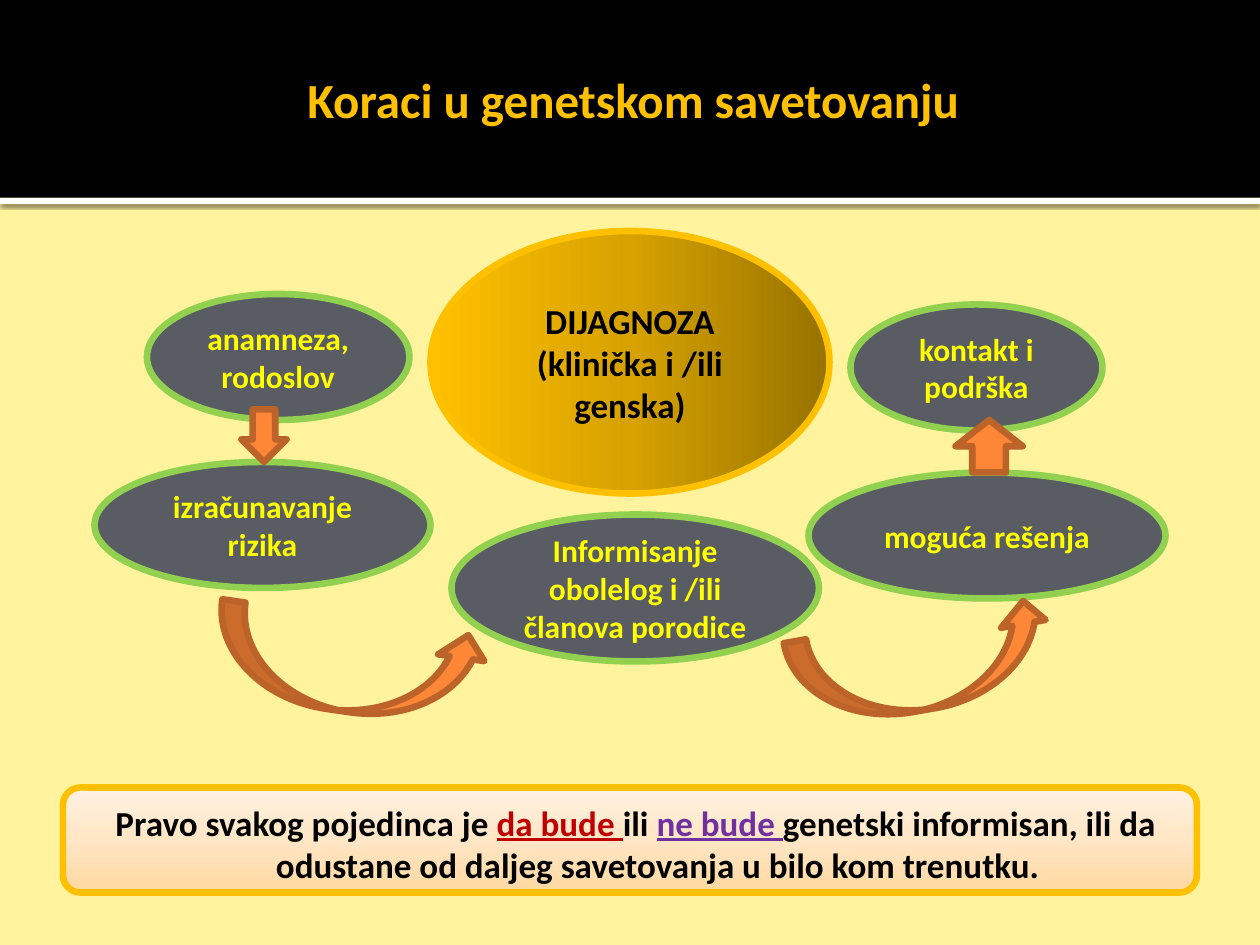
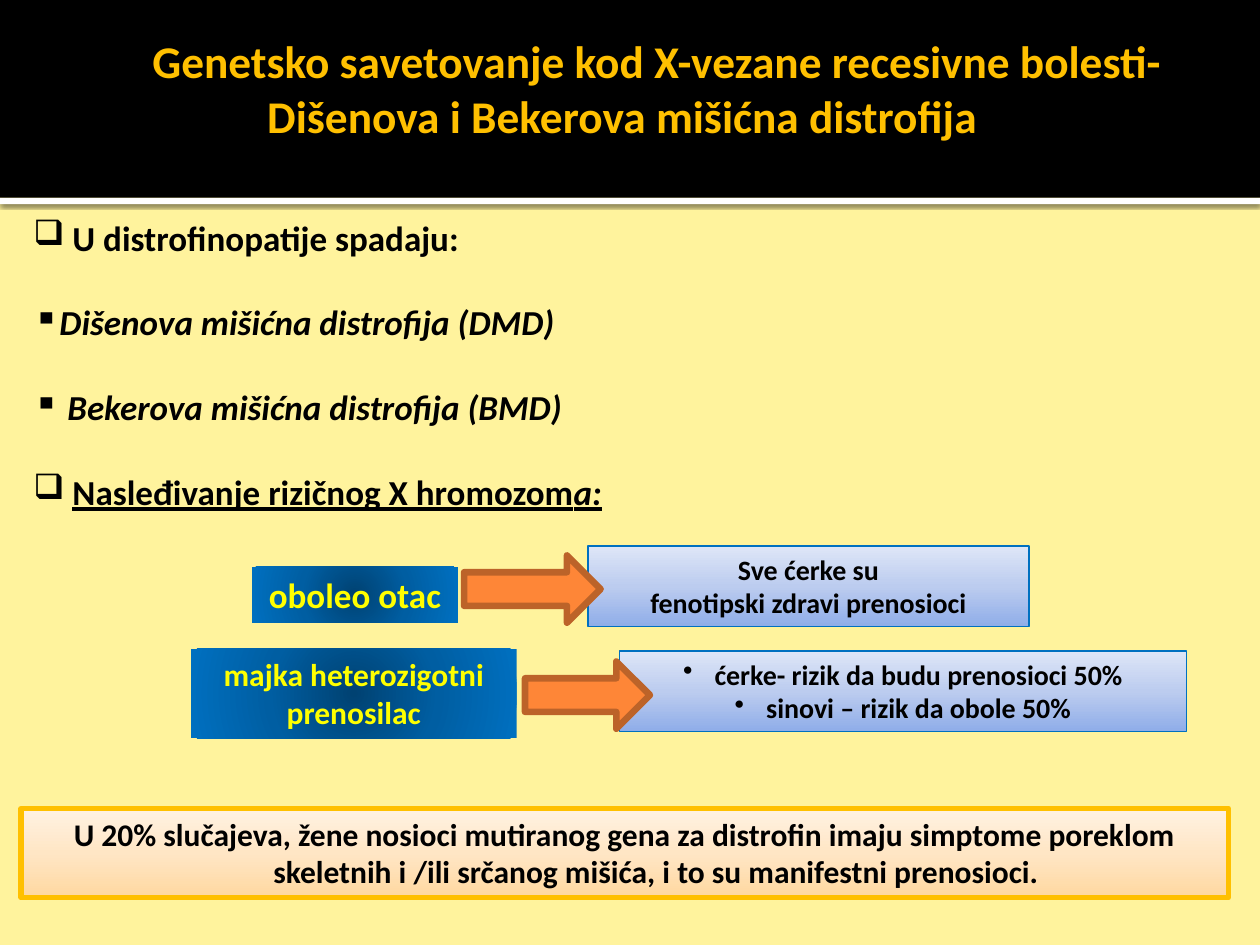
from pptx import Presentation
from pptx.dml.color import RGBColor
from pptx.enum.shapes import MSO_SHAPE
from pptx.enum.text import MSO_ANCHOR, PP_ALIGN
from pptx.oxml.ns import qn
from pptx.util import Inches, Pt
from lxml.etree import SubElement

HUES = {
    "page": "FFF39D", "band": "000000", "rule": "FFFFFF", "gold": "FFC000",
    "ink": "000000", "lemon": "FFFF00", "slate": "595D63", "lime": "92D050",
    "flame": "FE8637", "rust": "BC6329", "sea": "0070C0", "red": "C00000",
    "plum": "7030A0",
}
FADES = {
    "peach": (("FFD8A0", "FFE6C5", "FFF2E3"), 270),
    "amber": (("977200", "D7A200", "FFC000"), 180),
    "sky": (("8FADE9", "BCCCEF", "DEE6F7"), 270),
    "deep": (("004272", "005EA2", "0070C0"), None),
}
FONT = "Calibri"
WIDE, HIGH = Inches(10), Inches(7.5)
COLS, ROWS = 120, 90
EDGE = 3.78
BAND = 18.84
SNUG = (0.06, 0.1, 0.1, 0.05)


def tone(name):
    return RGBColor.from_string(HUES[name])


def place(col, row, cols, rows):
    return [int(n) for n in (col * WIDE / COLS, row * HIGH / ROWS,
                             cols * WIDE / COLS, rows * HIGH / ROWS)]


def node(root, tag, **attrs):
    return SubElement(root, qn("a:" + tag), {k: str(v) for k, v in attrs.items()})


def fade(shape, name):
    hues, angle = FADES[name]
    shape.fill.gradient()
    grad = shape.element.spPr.find(qn("a:gradFill"))
    grad.clear()
    stops = node(grad, "gsLst")
    for step, hue in enumerate(hues):
        node(node(stops, "gs", pos=step * 50000), "srgbClr", val=hue)
    if angle is None:
        way = node(grad, "path", path="circle")
        node(way, "fillToRect", l=50000, t=50000, r=50000, b=50000)
    else:
        node(grad, "lin", ang=angle * 60000, scaled=0)


def block(slide, kind, box, fill, line=None, edge=EDGE, turn=0):
    shape = slide.shapes.add_shape(kind, *place(*box))
    shape.shadow.inherit = False
    shape.rotation = turn
    if fill in FADES:
        fade(shape, fill)
    else:
        shape.fill.solid()
        shape.fill.fore_color.rgb = tone(fill)
    if line:
        shape.line.color.rgb = tone(line)
        shape.line.width = Pt(edge)
    else:
        shape.line.fill.background()
    return shape


def style(run, size, hue, form):
    look = {"name": FONT, "size": Pt(size), "bold": True, **form}
    for key, value in look.items():
        setattr(run.font, key, value)
    run.font.color.rgb = tone(hue)


def write(shape, paras, size, hue="ink", align=PP_ALIGN.CENTER,
          anchor=MSO_ANCHOR.TOP, inset=(0.1, 0.05, 0.1, 0.05), wrap=True,
          dents=None, marks=None, gap=0):
    frame = shape.text_frame
    sides = ("margin_left", "margin_top", "margin_right", "margin_bottom")
    look = {"word_wrap": wrap, "vertical_anchor": anchor,
            **dict(zip(sides, map(Inches, inset)))}
    for key, value in look.items():
        setattr(frame, key, value)
    for at, runs in enumerate(paras):
        para = frame.add_paragraph() if at else frame.paragraphs[0]
        para.alignment = align
        para.space_before = Pt(gap if at else 0)
        props = para._p.get_or_add_pPr()
        if dents:
            left, first = dents[min(at, len(dents) - 1)]
            props.set("marL", str(Inches(left)))
            props.set("indent", str(Inches(first)))
        if marks:
            node(props, "buChar", char=marks[at])
        for part in [runs] if isinstance(runs, str) else runs:
            text, tint, form = (part, hue, {}) if isinstance(part, str) else part
            run = para.add_run()
            run.text = text
            style(run, size, tint, form)


def label(slide, box, paras, size, **look):
    write(slide.shapes.add_textbox(*place(*box)), paras, size, **look)


def oval(slide, box, *paras):
    shape = block(slide, MSO_SHAPE.OVAL, box, "slate", "lime")
    write(shape, paras, 18, "lemon", anchor=MSO_ANCHOR.MIDDLE)


def arrow(slide, kind, box, turn=0):
    block(slide, kind, box, "flame", "rust", turn=turn)


def start(deck):
    slide = deck.slides.add_slide(deck.slide_layouts[6])
    slide.background.fill.solid()
    slide.background.fill.fore_color.rgb = tone("page")
    rule = block(slide, MSO_SHAPE.RECTANGLE, (0, BAND, COLS, 0.6), "rule")
    glow = node(rule.element.spPr.find(qn("a:effectLst")), "outerShdw",
                blurRad=Pt(2.5), dist=Pt(0.8), dir=90 * 60000, rotWithShape=0)
    node(node(glow, "srgbClr", val=HUES["ink"]), "alpha", val=60000)
    block(slide, MSO_SHAPE.RECTANGLE, (0, 0, COLS, BAND), "band")
    return slide


def steps(deck):
    slide = start(deck)
    label(slide, (6, 4, 108, 10.8), ["Koraci u genetskom savetovanju"], 28,
          hue="gold", anchor=MSO_ANCHOR.MIDDLE, inset=(0.1, 0.05, 0.05, 0.05))
    right = block(slide, MSO_SHAPE.ROUNDED_RECTANGLE, (6, 75, 108, 10), "peach", "gold")
    write(right, [[
        "Pravo svakog pojedinca je ",
        ("da bude ", "red", {"underline": True}), "ili ",
        ("ne bude ", "plum", {"underline": True}),
        "genetski informisan, ili da odustane od daljeg savetovanja u bilo kom trenutku.",
    ]], 20, anchor=MSO_ANCHOR.MIDDLE, inset=SNUG, dents=[(0.48, -0.35)])
    core = block(slide, MSO_SHAPE.OVAL, (41, 22, 38, 25), "amber", "gold")
    write(core, ["DIJAGNOZA", "(klinička i /ili genska)"], 20, anchor=MSO_ANCHOR.MIDDLE)
    oval(slide, (43, 49, 35, 14), "Informisanje", "obolelog i /ili članova porodice")
    oval(slide, (9, 44, 32, 12), "izračunavanje rizika")
    oval(slide, (14, 28, 25, 12), "anamneza, rodoslov")
    oval(slide, (81, 29, 24, 12), "kontakt i podrška")
    oval(slide, (77, 45, 34, 12), "moguća rešenja")
    arrow(slide, MSO_SHAPE.CURVED_UP_ARROW, (75.2, 59, 25.3, 8.6), 350)
    arrow(slide, MSO_SHAPE.CURVED_UP_ARROW, (20.4, 58.9, 25.9, 8.9), 8.3)
    arrow(slide, MSO_SHAPE.DOWN_ARROW, (23, 39, 4.3, 5))
    arrow(slide, MSO_SHAPE.UP_ARROW, (91, 40, 6.4, 5))


def linked(deck):
    slide = start(deck)
    label(slide, (2, 2, 115, 15),
          ["Genetsko savetovanje kod X-vezane recesivne bolesti-",
           "Dišenova i Bekerova mišićna distrofija"],
          25.9, hue="gold", inset=SNUG, dents=[(0.55, 0), (0.5, -0.5)])
    rect = MSO_SHAPE.RECTANGLE
    note = block(slide, rect, (2, 77, 115, 8.5), "peach", "gold", 3)
    write(note, ["U 20% slučajeva, žene nosioci mutiranog gena za distrofin imaju "
                 "simptome poreklom skeletnih i /ili srčanog mišićа, i to su "
                 "manifestni prenosioci."], 18, dents=[(0.5, -0.5)])
    girls = block(slide, rect, (56, 52, 42, 7.7), "sky", "sea", 0.75)
    write(girls, ["Sve ćerke su", "fenotipski zdravi prenosioci"], 16)
    dad = block(slide, rect, (24, 54, 19.6, 5.3), "deep")
    write(dad, ["oboleo otac"], 20, "lemon", wrap=False)
    mum = block(slide, rect, (18.2, 61.8, 31, 8.5), "deep")
    write(mum, ["majka heterozigotni prenosilac"], 18, "lemon")
    odds = block(slide, rect, (59, 62, 54, 7.7), "sky", "sea", 0.75)
    write(odds, ["ćerke- rizik da budu prenosioci 50%", "sinovi – rizik da obole 50%"],
          16, dents=[(0.25, -0.25)], marks="••")
    arrow(slide, MSO_SHAPE.RIGHT_ARROW, (50, 63, 11.9, 6.4))
    arrow(slide, MSO_SHAPE.RIGHT_ARROW, (44.2, 52.9, 13, 6.4))
    lean = {"italic": True}
    label(slide, (2, 20, 60, 33.5), [
        " U distrofinopatije spadaju:",
        [("Dišenova mišićna distrofija (DMD)", "ink", lean)],
        [(" Bekerova mišićna distrofija (BMD)", "ink", lean)],
        [" ", ("Nasleđivanje rizičnog X hromozom", "ink", {"underline": True}),
         ("a:", "ink", {"underline": True, **lean})],
    ], 20, align=PP_ALIGN.LEFT, dents=[(0, 0)], marks="❑▪▪❑", gap=24.4)


def main():
    deck = Presentation()
    deck.slide_width, deck.slide_height = WIDE, HIGH
    steps(deck)
    linked(deck)
    deck.save("out.pptx")


if __name__ == "__main__":
    main()
